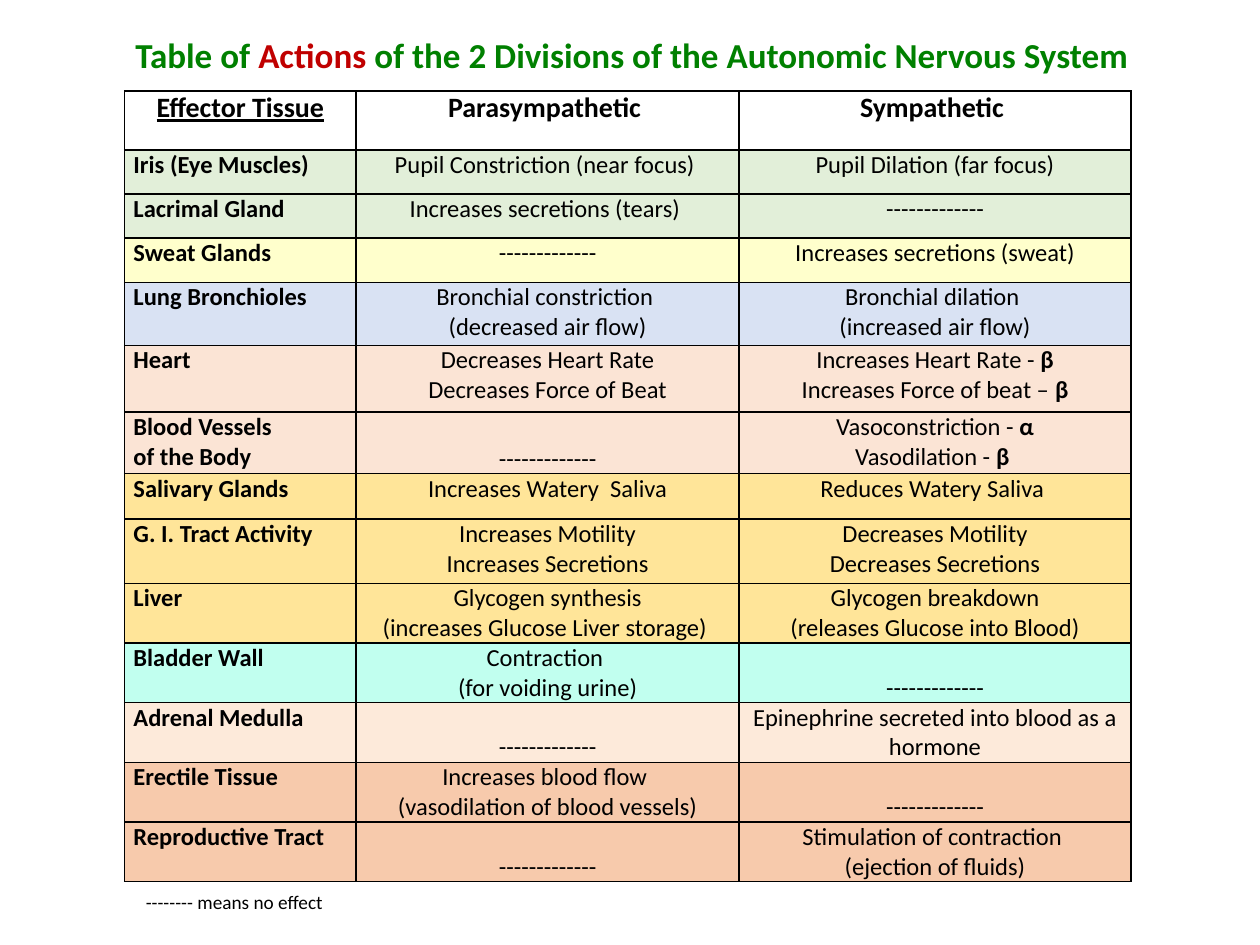
import pptx
import pptx.util
import pptx.dml.color
import pptx.enum.text
import pptx.oxml
import pptx.oxml.ns

Cm = pptx.util.Cm
Pt = pptx.util.Pt
RGBColor = pptx.dml.color.RGBColor
Align = pptx.enum.text.PP_ALIGN
Anchor = pptx.enum.text.MSO_ANCHOR

BLACK = RGBColor(0x00, 0x00, 0x00)
TITLE_GREEN = RGBColor(0x00, 0x80, 0x00)
TITLE_RED = RGBColor(0xC0, 0x00, 0x00)
GREEN = RGBColor(0xE2, 0xEF, 0xD9)
YELLOW = RGBColor(0xFF, 0xFF, 0xCC)
BLUE = RGBColor(0xD9, 0xE2, 0xF3)
PINK = RGBColor(0xFB, 0xE4, 0xD5)
GOLD = RGBColor(0xFF, 0xE5, 0x99)
AQUA = RGBColor(0xC1, 0xFF, 0xEF)
CREAM = RGBColor(0xFD, 0xEA, 0xDA)
ORANGE = RGBColor(0xF7, 0xCA, 0xAC)

NO_EFFECT = "-------------"
BOLD_MARK = "|"
TITLE = [
    ("Table of ", TITLE_GREEN),
    ("Actions", TITLE_RED),
    (" of the 2 Divisions of the Autonomic Nervous System", TITLE_GREEN),
]
FOOTNOTE = [("-------- means no effect", BLACK)]
HEADINGS = ["Effector Tissue", "Parasympathetic ", "Sympathetic "]
COLUMN_WIDTHS = [4.67, 7.72, 7.9]
HEADING_HEIGHT = 1.19
ROWS = [
    (0.89, GREEN, "Iris (Eye Muscles)", "Pupil Constriction (near focus) ", "Pupil Dilation (far focus)"),
    (0.89, GREEN, "Lacrimal Gland", "Increases secretions (tears) ", NO_EFFECT),
    (0.89, YELLOW, "Sweat Glands", NO_EFFECT, "Increases secretions (sweat)"),
    (1.27, BLUE, "Lung Bronchioles", "Bronchial constriction \n(decreased air flow)",
     "Bronchial dilation \n(increased air flow)"),
    (1.35, PINK, "Heart", "Decreases Heart Rate\nDecreases Force of Beat",
     "Increases Heart Rate - |β\nIncreases Force of beat – |β"),
    (1.24, PINK, "Blood Vessels\nof the Body", NO_EFFECT, "Vasoconstriction - |α\nVasodilation - |β "),
    (0.91, GOLD, "Salivary Glands", "Increases Watery  Saliva", "Reduces Watery Saliva "),
    (1.3, GOLD, "G. I. Tract Activity ", "Increases Motility\nIncreases Secretions",
     "Decreases Motility\nDecreases Secretions"),
    (1.2, GOLD, "Liver", "Glycogen synthesis\n(increases Glucose Liver storage) ",
     "Glycogen breakdown\n(releases Glucose into Blood)"),
    (1.2, AQUA, "Bladder Wall", "Contraction \n(for voiding urine)", NO_EFFECT),
    (1.2, CREAM, "Adrenal Medulla", NO_EFFECT, "Epinephrine secreted into blood as a hormone"),
    (1.2, ORANGE, "Erectile Tissue ", "Increases blood flow \n(vasodilation of blood vessels)", NO_EFFECT),
    (1.2, ORANGE, "Reproductive Tract", NO_EFFECT, "Stimulation of contraction \n(ejection of fluids)"),
]
TWO_LINES = 1.2

HEADING_FORMAT = {"size": Pt(16), "bold": True}
TISSUE_FORMAT = {"size": Pt(14), "bold": True}
ACTION_FORMAT = {"size": Pt(14), "bold": False}
CELL_FORMAT = {"margin_left": Cm(0.18), "margin_right": Cm(0.18), "margin_top": 0, "margin_bottom": 0}
BORDER = (
    '<a:{side} {namespace} w="12700"><a:solidFill><a:srgbClr val="{color}"/>'
    "</a:solidFill></a:{side}>"
)


def set_all(target, values):
    for name, value in values.items():
        setattr(target, name, value)


def add_run(paragraph, text, color, font_format):
    run = paragraph.add_run()
    run.text = text
    set_all(run.font, {"name": "Calibri", **font_format})
    run.font.color.rgb = color


def add_text_box(slide, box, runs, alignment, font_format):
    frame = slide.shapes.add_textbox(*map(Cm, box)).text_frame
    frame.word_wrap = False
    paragraph = frame.paragraphs[0]
    paragraph.alignment = alignment
    for text, color in runs:
        add_run(paragraph, text, color, font_format)


def fill_cell(cell, text, fill, alignment, font_format):
    set_all(cell, CELL_FORMAT)
    properties = cell._tc.get_or_add_tcPr()
    for side in ("lnL", "lnR", "lnT", "lnB"):
        properties.append(pptx.oxml.parse_xml(BORDER.format(
            side=side, namespace=pptx.oxml.ns.nsdecls("a"), color=BLACK)))
    if fill is None:
        cell.fill.background()
    else:
        cell.fill.solid()
        cell.fill.fore_color.rgb = fill
    for index, line in enumerate(text.split("\n")):
        frame = cell.text_frame
        paragraph = frame.add_paragraph() if index else frame.paragraphs[0]
        paragraph.alignment = alignment
        plain, _, strong = line.partition(BOLD_MARK)
        add_run(paragraph, plain, BLACK, font_format)
        if strong:
            add_run(paragraph, strong, BLACK, {**font_format, "bold": True})


def add_actions_table(slide):
    heights = [HEADING_HEIGHT] + [row[0] for row in ROWS]
    frame = slide.shapes.add_table(
        len(heights), len(COLUMN_WIDTHS), Cm(2.51), Cm(1.83),
        Cm(sum(COLUMN_WIDTHS)), Cm(sum(heights)))
    table = frame.table
    set_all(table, {"first_row": False, "horz_banding": False})
    for column, width in zip(table.columns, COLUMN_WIDTHS):
        column.width = Cm(width)
    for row, height in zip(table.rows, heights):
        row.height = Cm(height)
    for column, heading in enumerate(HEADINGS):
        font_format = {**HEADING_FORMAT, "underline": column == 0}
        fill_cell(table.cell(0, column), heading, None, Align.CENTER, font_format)
    for row, (height, fill, *texts) in enumerate(ROWS, start=1):
        for column, text in enumerate(texts):
            cell = table.cell(row, column)
            if column == 0:
                fill_cell(cell, text, fill, Align.LEFT, TISSUE_FORMAT)
            else:
                fill_cell(cell, text, fill, Align.CENTER, ACTION_FORMAT)
            if text == NO_EFFECT and height >= TWO_LINES:
                cell.vertical_anchor = Anchor.BOTTOM


def main():
    presentation = pptx.Presentation()
    presentation.slide_width = Cm(25.4)
    presentation.slide_height = Cm(19.05)
    slide = presentation.slides.add_slide(presentation.slide_layouts[6])
    add_actions_table(slide)
    add_text_box(slide, (2.39, 0.56, 20.7, 1.11), TITLE, Align.CENTER, {"size": Pt(20), "bold": True})
    add_text_box(slide, (2.69, 17.83, 4.14, 0.73), FOOTNOTE, Align.LEFT, {"size": Pt(11)})
    presentation.save("out.pptx")


if __name__ == "__main__":
    main()
